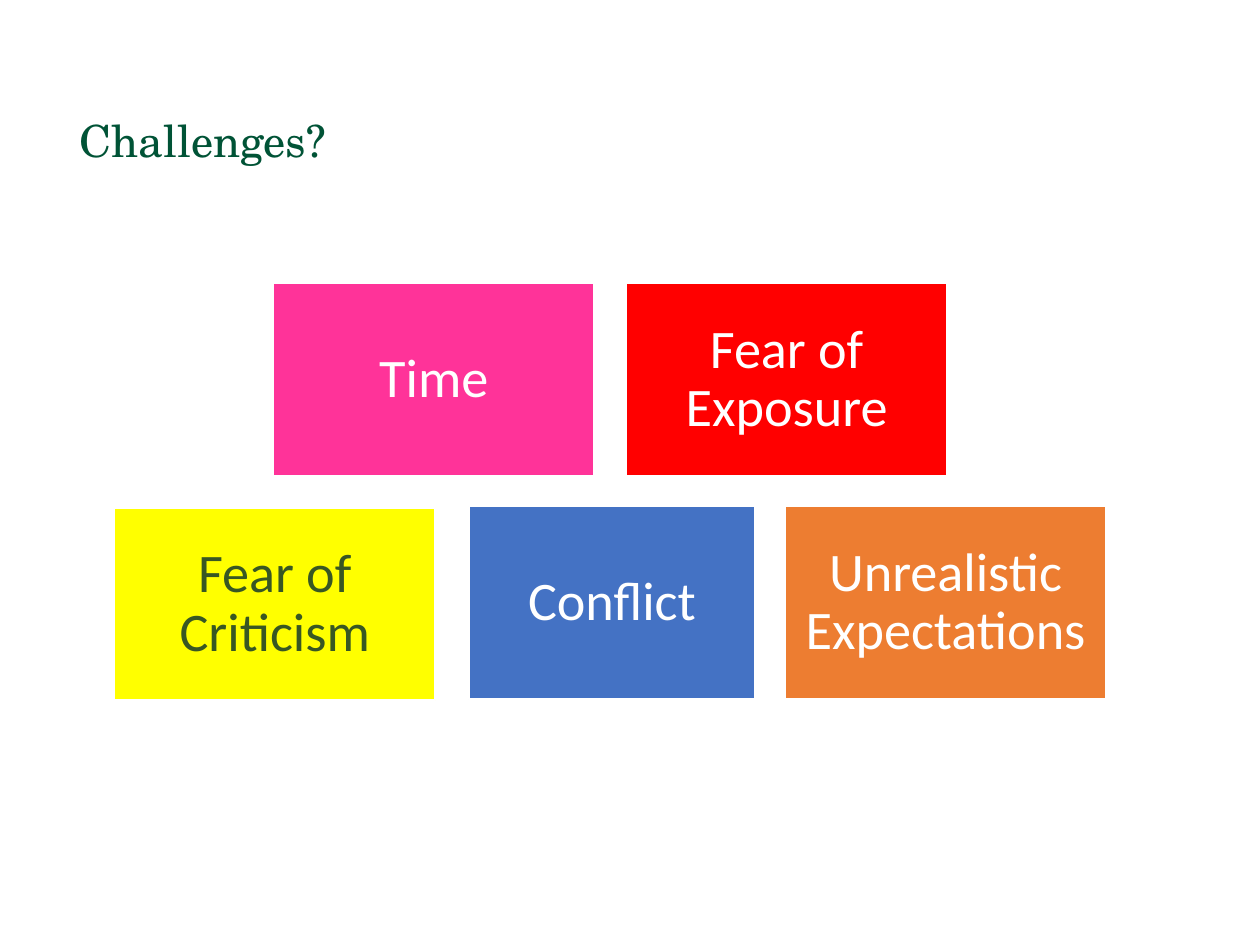
from dataclasses import dataclass

from pptx import Presentation
from pptx.dml.color import RGBColor
from pptx.enum import text
from pptx.enum.shapes import MSO_SHAPE
from pptx.util import Pt


@dataclass(frozen=True)
class Theme:
    title_font: str = "TeX Gyre Schola"
    card_font: str = "Calibri"
    title_size: float = 25.3
    card_size: float = 31
    title: str = "005336"
    white: str = "FFFFFF"
    dark_green: str = "385723"
    pink: str = "FF3399"
    red: str = "FF0000"
    yellow: str = "FFFF00"
    blue: str = "4472C4"
    orange: str = "ED7D31"


theme = Theme()


def write(frame, wording, font, size, color, align):
    frame.word_wrap = True
    para = frame.paragraphs[0]
    para.text = wording
    para.alignment = align
    para.line_spacing = 0.9
    para.font.name = font
    para.font.size = Pt(size)
    para.font.color.rgb = RGBColor.from_string(color)


deck = Presentation()
deck.slide_width, deck.slide_height = Pt(720), Pt(540)
page = deck.slides.add_slide(deck.slide_layouts[5])

title = page.shapes.title
title.left, title.top, title.width, title.height = Pt(38.2), Pt(64.8), Pt(620.6), Pt(55.4)
title.text_frame.auto_size = text.MSO_AUTO_SIZE.NONE
title.text_frame.vertical_anchor = text.MSO_ANCHOR.TOP
write(title.text_frame, "Challenges?", theme.title_font, theme.title_size,
      theme.title, text.PP_ALIGN.LEFT)

card_width, card_height, inset = 183.4, 110, 9.4
top_row, bottom_row = 162, 289.5
cards = [
    ("Time", 156.2, top_row, card_width, theme.pink, theme.white),
    ("Fear of Exposure", 357.8, top_row, card_width, theme.red, theme.white),
    ("Fear of Criticism", 65.3, bottom_row + 0.7, card_width, theme.yellow, theme.dark_green),
    ("Conflict", 268, bottom_row, 163.4, theme.blue, theme.white),
    ("Unrealistic Expectations", 448.6, bottom_row, card_width, theme.orange, theme.white),
]
for wording, left, top, width, fill, color in cards:
    card = page.shapes.add_shape(
        MSO_SHAPE.RECTANGLE, Pt(left), Pt(top), Pt(width), Pt(card_height))
    card.shadow.inherit = False
    card.fill.solid()
    card.fill.fore_color.rgb = RGBColor.from_string(fill)
    card.line.color.rgb = RGBColor.from_string(theme.white)
    card.line.width = Pt(1)
    frame = card.text_frame
    frame.margin_left = frame.margin_right = Pt(inset)
    frame.margin_top = frame.margin_bottom = Pt(inset)
    frame.vertical_anchor = text.MSO_ANCHOR.MIDDLE
    write(frame, wording, theme.card_font, theme.card_size, color, text.PP_ALIGN.CENTER)

deck.save("out.pptx")
